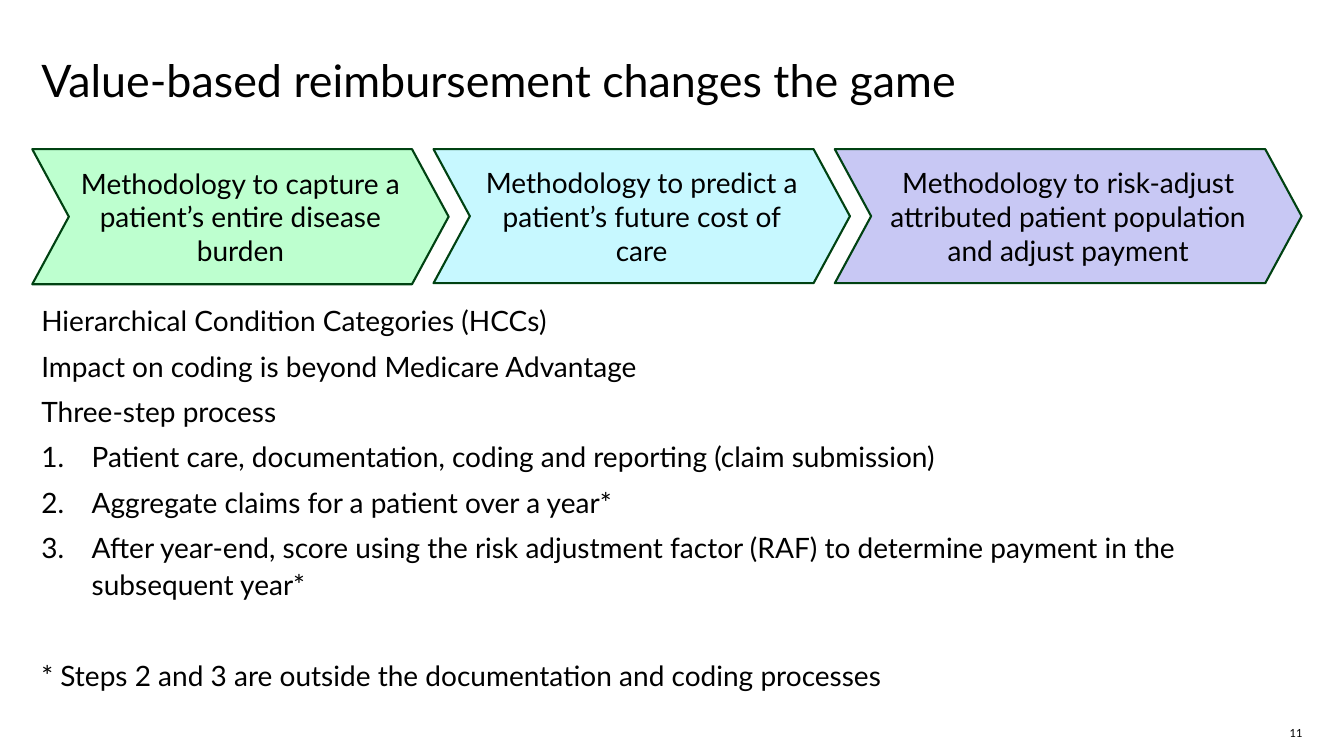
import pptx
import pptx.util
import pptx.dml.color
import pptx.enum.shapes
import pptx.enum.text
import pptx.oxml.ns
from dataclasses import dataclass
from lxml import etree

Inches, Pt = pptx.util.Inches, pptx.util.Pt
ALIGN = pptx.enum.text.PP_ALIGN
ANCHOR = pptx.enum.text.MSO_ANCHOR


@dataclass(frozen=True)
class Theme:
    font: str = "Lato"
    ink: str = "000000"
    outline: str = "004212"
    capture: str = "BDFFCF"
    predict: str = "C7F8FF"
    adjust: str = "C8C8F4"
    title_size: int = 32
    body_size: int = 20
    page_size: int = 8


THEME = Theme()


def rgb(color):
    return pptx.dml.color.RGBColor.from_string(color)


def write(paragraph, text, *, size=THEME.body_size, align=ALIGN.LEFT,
          spacing=1.0, before=0, after=0, numbered=False):
    """Fill one paragraph with formatted text."""
    if numbered:
        properties = paragraph._p.get_or_add_pPr()
        properties.set("marL", str(Inches(0.5)))
        properties.set("indent", str(Inches(-0.5)))
        etree.SubElement(properties, pptx.oxml.ns.qn("a:buAutoNum"), type="arabicPeriod")
    paragraph.alignment = align
    paragraph.line_spacing = spacing
    if before:
        paragraph.space_before = Pt(before)
    paragraph.space_after = Pt(after)
    run = paragraph.add_run()
    run.text = text
    run.font.name = THEME.font
    run.font.size = Pt(size)
    run.font.color.rgb = rgb(THEME.ink)


class SlideBuilder:
    def __init__(self, slide, theme):
        self.slide = slide
        self.theme = theme

    def frame(self, shape, margins, anchor):
        frame = shape.text_frame
        frame.word_wrap = True
        frame.vertical_anchor = anchor
        (frame.margin_left, frame.margin_top,
         frame.margin_right, frame.margin_bottom) = map(Inches, margins)
        return frame

    def text(self, box, entries, right_margin=0):
        """Add a text box; each entry is a text and its format."""
        shape = self.slide.shapes.add_textbox(*map(Inches, box))
        frame = self.frame(shape, (0, 0, right_margin, 0), ANCHOR.TOP)
        for index, (words, style) in enumerate(entries):
            paragraph = frame.add_paragraph() if index else frame.paragraphs[0]
            write(paragraph, words, **style)

    def chevron(self, box, words, fill):
        shape = self.slide.shapes.add_shape(
            pptx.enum.shapes.MSO_SHAPE.CHEVRON, *map(Inches, box))
        shape.adjustments[0] = 0.271
        shape.shadow.inherit = False
        shape.fill.solid()
        shape.fill.fore_color.rgb = rgb(fill)
        shape.line.color.rgb = rgb(self.theme.outline)
        shape.line.width = Pt(1.5)
        frame = self.frame(shape, (0.05, 0.1, 0.05, 0.1), ANCHOR.MIDDLE)
        write(frame.paragraphs[0], words, align=ALIGN.CENTER)


def main():
    deck = pptx.Presentation()
    deck.slide_width, deck.slide_height = Inches(13.33), Inches(7.5)
    builder = SlideBuilder(deck.slides.add_slide(deck.slide_layouts[6]), THEME)

    # Page number and title
    builder.text((12.68, 7.21, 0.24, 0.13),
                 [("11", dict(size=THEME.page_size, align=ALIGN.RIGHT))])
    builder.text((0.41, 0.58, 12.49, 0.9),
                 [("Value-based reimbursement changes the game",
                   dict(size=THEME.title_size, spacing=0.9))])

    # Body: statements, numbered steps and footnote
    plain = dict(spacing=1.1, after=6)
    step = dict(plain, numbered=True)
    footnote = dict(plain, before=32.4)
    builder.text((0.41, 2.98, 12.5, 3.9), [
        ("Hierarchical Condition Categories (HCCs)", plain),
        ("Impact on coding is beyond Medicare Advantage", plain),
        ("Three-step process", plain),
        ("Patient care, documentation, coding and reporting (claim submission)", step),
        ("Aggregate claims for a patient over a year*", step),
        ("After year-end, score using the risk adjustment factor (RAF) "
         "to determine payment in the subsequent year*", step),
        ("* Steps 2 and 3 are outside the documentation and coding processes", footnote),
    ], right_margin=0.2)

    # Methodology chevrons, each nested into the one before
    left, overlap = 0.32, 0.15
    for words, fill, width, height in (
        ("Methodology to capture a patient’s entire disease burden",
         THEME.capture, 4.13, 1.34),
        ("Methodology to predict a patient’s future cost of care",
         THEME.predict, 4.13, 1.33),
        ("Methodology to risk-adjust attributed patient population and adjust payment",
         THEME.adjust, 4.63, 1.33),
    ):
        builder.chevron((left, 1.48, width, height), words, fill)
        left += width - overlap

    deck.save("out.pptx")


if __name__ == "__main__":
    main()
